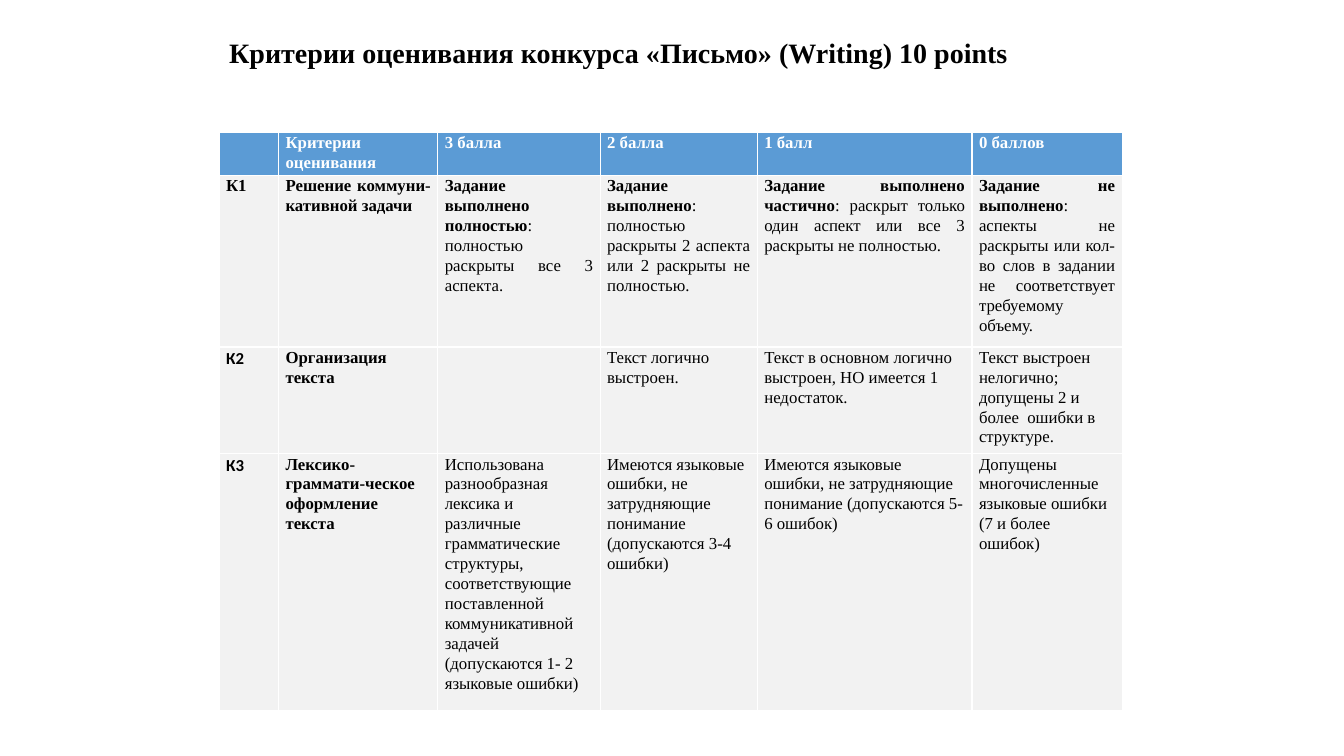
from pptx import Presentation
from pptx.dml.color import RGBColor
from pptx.enum.text import MSO_ANCHOR, PP_ALIGN
from pptx.util import Pt

WHITE = RGBColor(0xFF, 0xFF, 0xFF)
BLACK = RGBColor(0x00, 0x00, 0x00)
BLUE = RGBColor(0x5B, 0x9B, 0xD5)
GRAY = RGBColor(0xF2, 0xF2, 0xF2)

TITLE = "Критерии оценивания конкурса «Письмо» (Writing) 10 points"
HEAD = ["", "Критерии оценивания", "3 балла", "2 балла", "1 балл", "0 баллов"]
ROWS = [
    ["К1", "Решение коммуни-кативной задачи",
     ("Задание выполнено полностью", ": полностью раскрыты все 3 аспекта. "),
     ("Задание выполнено",
      ": полностью раскрыты 2 аспекта или 2 раскрыты не полностью."),
     ("Задание выполнено частично",
      ": раскрыт только один аспект или все 3 раскрыты не полностью. "),
     ("Задание не выполнено",
      ": аспекты не раскрыты или кол-во слов в задании не соответствует "
      "требуемому объему.")],
    ["К2", "Организация текста", "",
     "Текст логично выстроен.",
     "Текст в основном логично выстроен, НО имеется 1 недостаток.",
     "Текст выстроен нелогично; допущены 2 и более  ошибки в структуре."],
    ["К3", "Лексико-граммати-ческое оформление текста",
     "Использована разнообразная лексика и различные грамматические "
     "структуры, соответствующие\nпоставленной коммуникативной задачей "
     "(допускаются 1- 2 языковые ошибки)",
     "Имеются языковые ошибки, не затрудняющие понимание "
     "(допускаются 3-4 ошибки)",
     "Имеются языковые ошибки, не затрудняющие понимание "
     "(допускаются 5-6 ошибок)",
     "Допущены многочисленные языковые ошибки (7 и более ошибок)"],
]
WIDTHS = [42.5, 113.8, 115.9, 112.3, 153.4, 107.3]
HEIGHTS = [31, 122.4, 76.3, 183.6]


class Deck:
    face = "Times New Roman"
    code = "Calibri"

    def __init__(self, show):
        self.slide = show.slides.add_slide(show.slide_layouts[5])

    def style(self, para, size, color, bold, face, align, space):
        font = para.font
        font.name, font.size, font.bold = face, Pt(size), bold
        font.color.rgb = color
        para.alignment = align
        para.line_spacing = space

    def title(self, text, left, top, width, height):
        box = self.slide.shapes.title
        box.left, box.top = Pt(left), Pt(top)
        box.width, box.height = Pt(width), Pt(height)
        frame = box.text_frame
        frame.text = text
        frame.vertical_anchor = MSO_ANCHOR.MIDDLE
        self.style(frame.paragraphs[0], 20, BLACK, True, self.face,
                   PP_ALIGN.LEFT, 0.9)

    def cell(self, cell, text, fill, color, bold, face, align):
        cell.fill.solid()
        cell.fill.fore_color.rgb = fill
        cell.margin_left = cell.margin_right = Pt(5)
        cell.margin_top = cell.margin_bottom = Pt(0)
        frame = cell.text_frame
        if isinstance(text, tuple):
            for part, heavy in zip(text, (True, False)):
                run = frame.paragraphs[0].add_run()
                run.text = part
                run.font.bold = heavy
        else:
            frame.text = text
        for para in frame.paragraphs:
            self.style(para, 12, color, bold, face, align, 1.07)

    def table(self, head, rows, left, top, widths, heights):
        grid = self.slide.shapes.add_table(
            len(heights), len(widths), Pt(left), Pt(top),
            Pt(sum(widths)), Pt(sum(heights))).table
        for col, width in zip(grid.columns, widths):
            col.width = Pt(width)
        for row, height in zip(grid.rows, heights):
            row.height = Pt(height)
        for x, text in enumerate(head):
            self.cell(grid.cell(0, x), text, BLUE, WHITE, True,
                      self.face, PP_ALIGN.LEFT)
        for y, row in enumerate(rows, 1):
            align = PP_ALIGN.JUSTIFY if y == 1 else PP_ALIGN.LEFT
            for x, text in enumerate(row):
                face = self.code if x == 0 and y > 1 else self.face
                self.cell(grid.cell(y, x), text, GRAY, BLACK, x < 2,
                          face, align)


def main():
    show = Presentation()
    show.slide_width, show.slide_height = Pt(960), Pt(540)
    deck = Deck(show)
    deck.title(TITLE, 156.5, 12, 648, 54)
    deck.table(HEAD, ROWS, 156.5, 94.5, WIDTHS, HEIGHTS)
    show.save("out.pptx")


if __name__ == "__main__":
    main()
